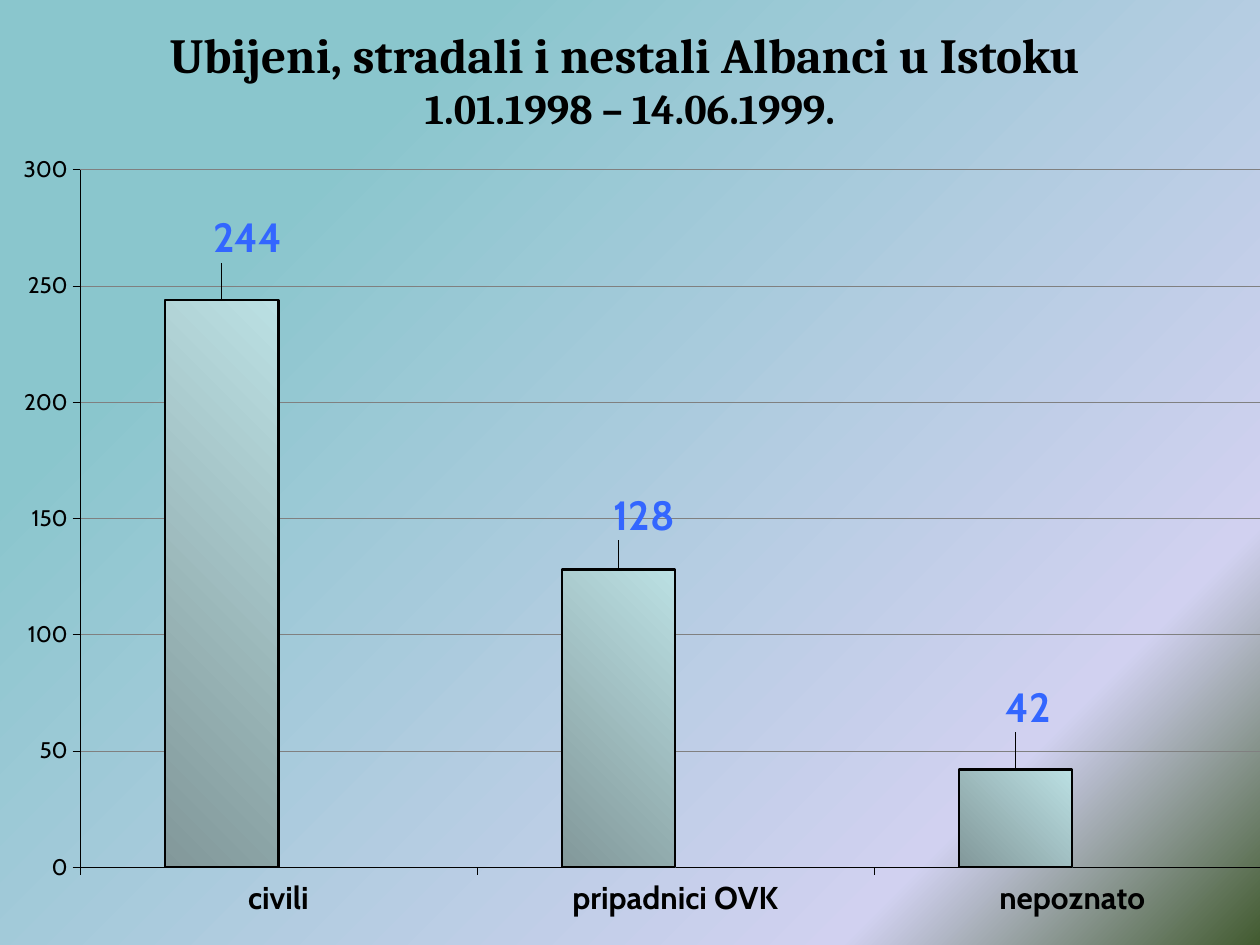
from copy import deepcopy

from lxml import etree
from pptx import Presentation
from pptx.chart.data import CategoryChartData
from pptx.dml.color import RGBColor
from pptx.enum.chart import XL_CHART_TYPE, XL_LABEL_POSITION, XL_TICK_LABEL_POSITION, XL_TICK_MARK
from pptx.enum.text import MSO_ANCHOR, PP_ALIGN
from pptx.oxml.ns import qn
from pptx.util import Inches, Pt

THEME = {
    "ink": RGBColor.from_string("000000"),
    "grid": RGBColor.from_string("808080"),
    "empty_series": RGBColor.from_string("333399"),
    "backdrop": [(0.22, "8AC6CD"), (0.81, "D1D1F0"), (1, "425B30")],
    "bar": [(0, "82989A"), (1, "BBE0E3")],
    "hairline": Pt(0.32),
    "bar_line": Pt(1.29),
}
BODY_FONT = {"name": "Cabin", "size": Pt(23.3), "bold": True}
HEADING = {"name": "Cambria", "size": Pt(28), "bold": True}
SUBHEADING = {**HEADING, "size": Pt(24)}
CATEGORY_FONT = {**BODY_FONT, "size": Pt(18)}
SCALE_FONT = {**BODY_FONT, "size": Pt(12.9), "bold": False}


def apply_format(font, values, color=THEME["ink"]):
    for attribute, value in values.items():
        setattr(font, attribute, value)
    font.color.rgb = color


def paint_gradient(fill, stops, angle):
    """Fill with (position, hex) stops; angle runs counter-clockwise."""
    fill.gradient()
    fill.gradient_angle = angle
    first = fill.gradient_stops[0]._gs
    for _ in stops[2:]:
        first.addnext(deepcopy(first))
    for stop, (position, color) in zip(fill.gradient_stops, stops):
        stop.position = position
        stop.color.rgb = RGBColor.from_string(color)


prs = Presentation()
prs.slide_width, prs.slide_height = Inches(10), Inches(7.5)
slide = prs.slides.add_slide(prs.slide_layouts[5])
paint_gradient(slide.background.fill, THEME["backdrop"], 315)

# Title
title = slide.shapes.title
title.left, title.top, title.width, title.height = Inches(0.5), Inches(0), Inches(9), Inches(1.25)
title.text_frame.vertical_anchor = MSO_ANCHOR.MIDDLE
heading = title.text_frame.paragraphs[0]
heading.alignment = PP_ALIGN.CENTER
subject = heading.add_run()
subject.text = "Ubijeni, stradali i nestali Albanci u Istoku "
apply_format(subject.font, HEADING)
heading.add_line_break()
period = heading.add_run()
period.text = "1.01.1998 – 14.06.1999."
apply_format(period.font, SUBHEADING)

# Chart
victims = CategoryChartData()
victims.categories = ["civili", "pripadnici OVK", "nepoznato"]
victims.add_series("Series 1", [244, 128, 42])
victims.add_series("Series 2", [None, None, None])
chart = slide.shapes.add_chart(
    XL_CHART_TYPE.COLUMN_CLUSTERED, Inches(0), Inches(1.21), Inches(10.25), Inches(6.29), victims
).chart
chart.has_title = False
chart.has_legend = False
apply_format(chart.font, BODY_FONT)

plot_area = chart._chartSpace.chart.plotArea
for old_layout in plot_area.findall(qn("c:layout")):
    plot_area.remove(old_layout)
layout = etree.Element(qn("c:layout"))
plot_area.insert(0, layout)
manual = etree.SubElement(layout, qn("c:manualLayout"))
for tag, value in [("layoutTarget", "inner"), ("xMode", "edge"), ("yMode", "edge"),
                   ("x", 0.062), ("y", 0.022), ("w", 0.922), ("h", 0.88)]:
    etree.SubElement(manual, qn(f"c:{tag}"), val=str(value))

# Axes
for axis, font in [(chart.category_axis, CATEGORY_FONT), (chart.value_axis, SCALE_FONT)]:
    axis.major_tick_mark = XL_TICK_MARK.OUTSIDE
    axis.minor_tick_mark = XL_TICK_MARK.NONE
    axis.format.line.color.rgb = THEME["ink"]
    axis.format.line.width = THEME["hairline"]
    apply_format(axis.tick_labels.font, font)
chart.category_axis.tick_label_position = XL_TICK_LABEL_POSITION.LOW
scale = chart.value_axis
scale.minimum_scale, scale.maximum_scale, scale.major_unit = 0, 300, 50
scale.has_major_gridlines = True
scale.major_gridlines.format.line.color.rgb = THEME["grid"]
scale.major_gridlines.format.line.width = THEME["hairline"]

# Bars
bars = chart.plots[0]
bars.gap_width, bars.overlap, bars.vary_by_categories = 150, 0, False
counts, empty = bars.series
paint_gradient(counts.format.fill, THEME["bar"], 45)
empty.format.fill.solid()
empty.format.fill.fore_color.rgb = THEME["empty_series"]
for series in (counts, empty):
    series.invert_if_negative = False
    series.format.line.color.rgb = THEME["ink"]
    series.format.line.width = THEME["bar_line"]

# Value labels, each shifted up and right of its bar
label_shifts = [(0.02, -0.04), (0.02, -0.03), (0.01, -0.04)]
for index, (shift_x, shift_y) in enumerate(label_shifts):
    count_label = counts.points[index].data_label
    apply_format(count_label.font, BODY_FONT, RGBColor.from_string("3366FF"))
    count_label.position = XL_LABEL_POSITION.OUTSIDE_END
    layout = etree.Element(qn("c:layout"))
    manual = etree.SubElement(layout, qn("c:manualLayout"))
    etree.SubElement(manual, qn("c:x"), val=str(shift_x))
    etree.SubElement(manual, qn("c:y"), val=str(shift_y))
    count_label._dLbl.insert(1, layout)

prs.save("out.pptx")
